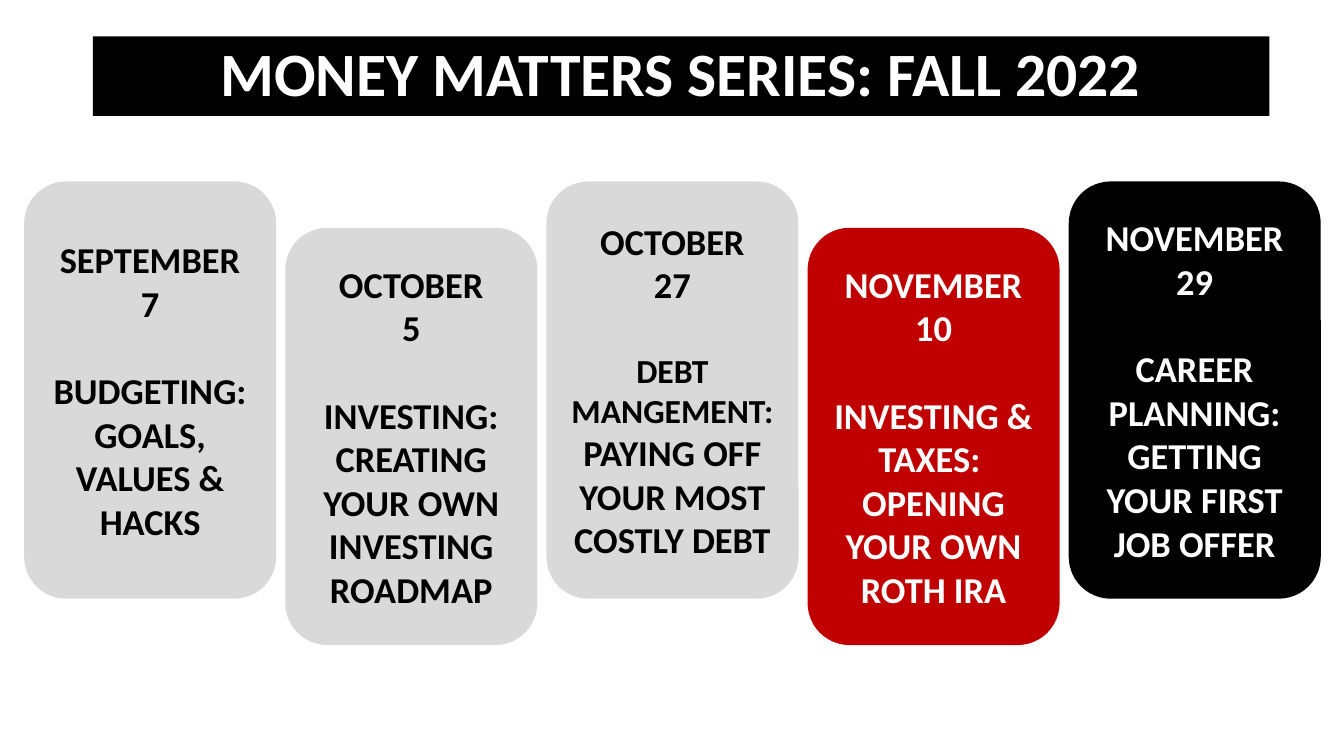
from pptx import Presentation
from pptx.dml.color import RGBColor
from pptx.enum.shapes import MSO_SHAPE
from pptx.enum.text import MSO_ANCHOR, MSO_AUTO_SIZE, PP_ALIGN
from pptx.util import Inches, Pt

ROUNDED = MSO_SHAPE.ROUNDED_RECTANGLE
MIDDLE = MSO_ANCHOR.MIDDLE
NO_FIT = MSO_AUTO_SIZE.NONE
CENTER = PP_ALIGN.CENTER
TITLE_ONLY = 5

BLACK, WHITE, GREY, RED = "000000", "FFFFFF", "D9D9D9", "C00000"
TEXT_SIZE, SMALL_SIZE, TITLE_SIZE = 26, 24, 44
DATE_GAP = 31  # points between a date and its topic

# Card grid, in inches
GRID_LEFT, GRID_TOP = 0.24, 1.8
COLUMN_PITCH, STAGGER = 2.59, 0.46
CARD_WIDTH, CARD_HEIGHT = 2.5, 4.14

# Date, topic paragraphs as (text, size) runs, fill, text colour
SESSIONS = [
    ("SEPTEMBER\n7",
     [[("BUDGETING:", TEXT_SIZE)], [("GOALS, VALUES & HACKS", TEXT_SIZE)]],
     GREY, BLACK),
    ("OCTOBER\n5",
     [[("INVESTING:", TEXT_SIZE)],
      [("CREATING YOUR OWN INVESTING ROADMAP", TEXT_SIZE)]],
     GREY, BLACK),
    ("OCTOBER\n27",
     [[("DEBT MANGEMENT: ", SMALL_SIZE),
       ("PAYING OFF YOUR MOST COSTLY DEBT", TEXT_SIZE)]],
     GREY, BLACK),
    ("NOVEMBER 10",
     [[("INVESTING & TAXES: \nOPENING YOUR OWN ROTH IRA", TEXT_SIZE)]],
     RED, WHITE),
    ("NOVEMBER\n29",
     [[("CAREER PLANNING: GETTING YOUR FIRST JOB OFFER", TEXT_SIZE)]],
     BLACK, WHITE),
]


def color(hex_value):
    return RGBColor.from_string(hex_value)


def paint(shape, fill):
    shape.fill.solid()
    shape.fill.fore_color.rgb = color(fill)
    shape.line.fill.background()


def set_attributes(target, values):
    for name, value in values.items():
        setattr(target, name, value)


def write(paragraph, runs, text_color):
    paragraph.alignment = CENTER
    for text, size in runs:
        for index, line in enumerate(text.split("\n")):
            if index:
                paragraph.add_line_break()
            run = paragraph.add_run()
            run.text = line
            set_attributes(run.font, {"name": "Calibri", "size": Pt(size), "bold": True})
            run.font.color.rgb = color(text_color)


def add_title(slide, left, top, width, height):
    title = slide.shapes.title
    set_attributes(title, {"left": Inches(left), "top": Inches(top),
                           "width": Inches(width), "height": Inches(height)})
    paint(title, BLACK)
    frame = title.text_frame
    set_attributes(frame, {"auto_size": NO_FIT, "vertical_anchor": MIDDLE, "word_wrap": True})
    heading = frame.paragraphs[0]
    heading.line_spacing = 0.9
    write(heading, [("MONEY MATTERS SERIES: FALL 2022", TITLE_SIZE)], WHITE)


def add_session(slide, left, top, session):
    date, topic, fill, text_color = session
    card = slide.shapes.add_shape(ROUNDED, Inches(left), Inches(top),
                                  Inches(CARD_WIDTH), Inches(CARD_HEIGHT))
    card.shadow.inherit = False
    paint(card, fill)
    frame = card.text_frame
    set_attributes(frame, {"vertical_anchor": MIDDLE, "word_wrap": True})
    write(frame.paragraphs[0], [(date, TEXT_SIZE)], text_color)
    for index, runs in enumerate(topic):
        paragraph = frame.add_paragraph()
        if index == 0:
            paragraph.space_before = Pt(DATE_GAP)
        write(paragraph, runs, text_color)


def add_schedule(slide, left, top):
    # Every second card sits lower
    for column, session in enumerate(SESSIONS):
        add_session(slide, left + column * COLUMN_PITCH,
                    top + column % 2 * STAGGER, session)


def main():
    deck = Presentation()
    set_attributes(deck, {"slide_width": Inches(13.33), "slide_height": Inches(7.5)})
    slide = deck.slides.add_slide(deck.slide_layouts[TITLE_ONLY])
    add_title(slide, 0.92, 0.36, 11.67, 0.79)
    add_schedule(slide, GRID_LEFT, GRID_TOP)
    deck.save("out.pptx")


if __name__ == "__main__":
    main()
